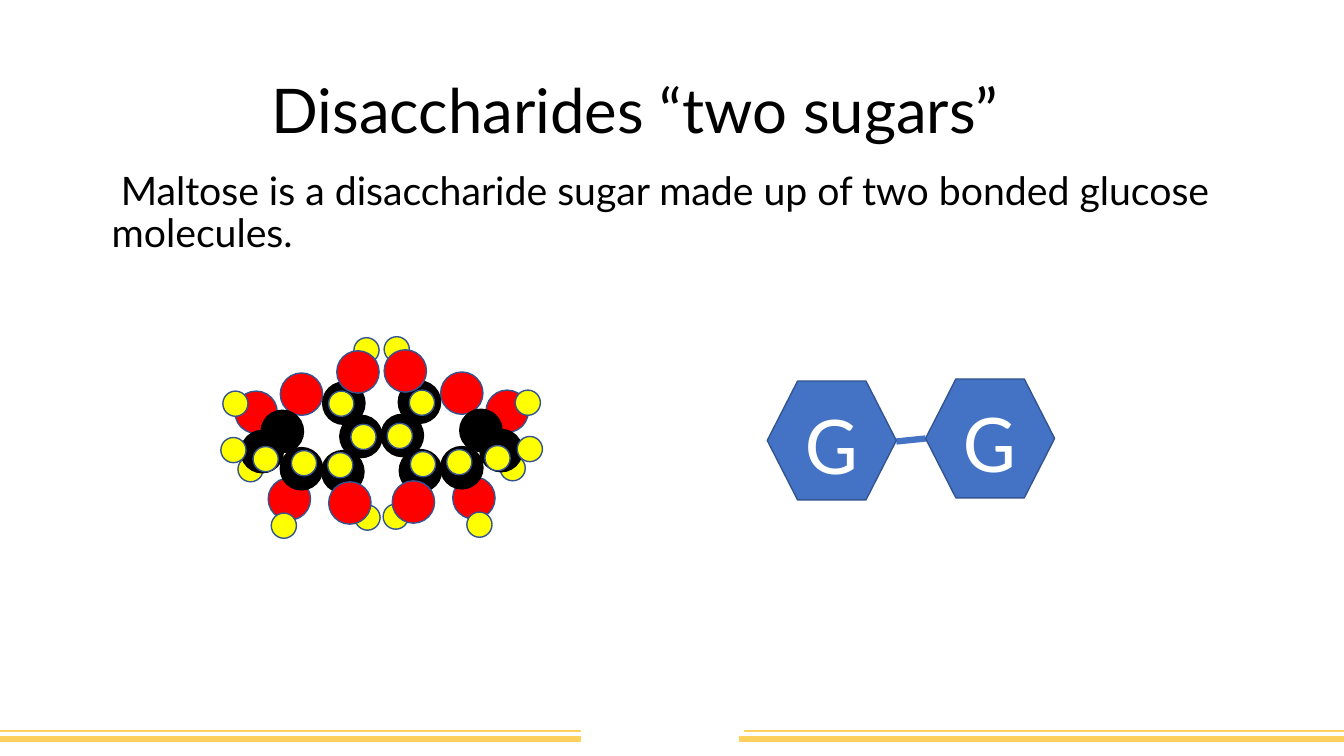
from dataclasses import dataclass

from lxml.etree import SubElement
from pptx import Presentation
from pptx.dml.color import RGBColor
from pptx.enum.shapes import MSO_CONNECTOR, MSO_SHAPE
from pptx.enum.text import MSO_ANCHOR, PP_ALIGN
from pptx.oxml.ns import qn
from pptx.util import Pt

EMU_PER_PX = 9144  # 100 px to the inch


def px(length):
    return length * EMU_PER_PX


@dataclass(frozen=True)
class Theme:
    text: str = "000000"
    letter: str = "FFFFFF"
    carbon: str = "000000"
    oxygen: str = "FF0000"
    hydrogen: str = "FFFF00"
    glucose: str = "4472C4"
    outline: str = "325491"
    footer: str = "FFD05B"
    font: str = "Lato"
    letter_font: str = "Calibri"
    title_size: int = 44
    body_size: int = 28
    letter_size: int = 60
    thin: float = 1
    rule: float = 1.5
    thick: float = 4.5


class SlideBuilder:
    def __init__(self, slide, theme):
        self.slide = slide
        self.theme = theme

    def group(self):
        return self.slide.shapes.add_group_shape().shapes

    def line(self, shapes, start, end, color, width):
        connector = shapes.add_connector(
            MSO_CONNECTOR.STRAIGHT, *map(px, start + end))
        connector.line.color.rgb = RGBColor.from_string(color)
        connector.line.width = Pt(width)
        SubElement(connector._element.spPr, qn("a:effectLst"))

    def shape(self, shapes, preset, box, fill, outline):
        shape = shapes.add_shape(preset, *map(px, box))
        shape.shadow.inherit = False
        shape.fill.solid()
        shape.fill.fore_color.rgb = RGBColor.from_string(fill)
        shape.line.color.rgb = RGBColor.from_string(outline)
        shape.line.width = Pt(self.theme.thin)
        return shape

    def run(self, paragraph, text, size, font, color):
        run = paragraph.add_run()
        run.text = text
        run.font.size = Pt(size)
        run.font.name = font
        run.font.color.rgb = RGBColor.from_string(color)

    def text(self, box, text, size, anchor, align, right_inset=10, indent=0):
        frame = self.slide.shapes.add_textbox(*map(px, box)).text_frame
        frame.word_wrap = True
        frame.vertical_anchor = anchor
        frame.margin_right = px(right_inset)
        paragraph = frame.paragraphs[0]
        paragraph.alignment = align
        paragraph.line_spacing = 0.9
        paragraph._p.get_or_add_pPr().set("indent", str(px(indent)))
        self.run(paragraph, text, size, self.theme.font, self.theme.text)

    def glucose_unit(self, shapes, left, top):
        hexagon = self.shape(shapes, MSO_SHAPE.HEXAGON, (left, top, 128, 118),
                             self.theme.glucose, self.theme.outline)
        hexagon.adjustments[0] = 0.255
        hexagon.text_frame.vertical_anchor = MSO_ANCHOR.MIDDLE
        paragraph = hexagon.text_frame.paragraphs[0]
        paragraph.alignment = PP_ALIGN.CENTER
        self.run(paragraph, "G", self.theme.letter_size,
                 self.theme.letter_font, self.theme.letter)

    def molecule(self, atoms, mirrored=False):
        """Draw the atoms back to front, optionally reflected to the right."""
        theme = self.theme
        kinds = {
            "C": (42, theme.carbon, theme.carbon),
            "O": (42, theme.oxygen, theme.outline),
            "H": (25, theme.hydrogen, theme.outline),
        }
        shapes = self.group()
        for element, left, top in atoms:
            size, fill, outline = kinds[element]
            if mirrored:
                left, top = MIRROR_SUM - left - size, top - 1
            self.shape(shapes, MSO_SHAPE.OVAL, (left, top, size, size),
                       fill, outline)


MIRROR_SUM = 757  # left edge of an atom plus right edge of its reflection
GLUCOSE_ATOMS = [
    ("O", 233, 388), ("O", 266, 474), ("C", 337, 412), ("O", 278, 370),
    ("C", 320, 379), ("H", 351, 335), ("H", 348, 421), ("H", 352, 501),
    ("H", 269, 509), ("H", 221, 388), ("C", 319, 447), ("C", 278, 444),
    ("C", 259, 407), ("O", 326, 478), ("H", 325, 449), ("H", 236, 453),
    ("H", 289, 447), ("H", 326, 388), ("O", 334, 348), ("C", 239, 427),
    ("H", 251, 443), ("H", 219, 434),
]


def main():
    theme = Theme()
    deck = Presentation()
    deck.slide_width, deck.slide_height = px(1333), px(750)
    builder = SlideBuilder(deck.slides.add_slide(deck.slide_layouts[6]), theme)

    for left, right, y, width in [
        (733, 1333, 733, theme.thick), (0, 576, 733, theme.thick),
        (0, 576, 725, theme.rule), (738, 1333, 725, theme.rule),
    ]:
        builder.line(builder.slide.shapes, (left, y), (right, y),
                     theme.footer, width)

    builder.text((47, 40, 1194, 145), "Disaccharides “two sugars”",
                 theme.title_size, MSO_ANCHOR.MIDDLE, PP_ALIGN.CENTER,
                 right_inset=38)
    builder.text((101, 165, 1150, 508),
                 "Maltose is a disaccharide sugar made up of two bonded "
                 "glucose molecules.",
                 theme.body_size, MSO_ANCHOR.TOP, PP_ALIGN.LEFT, indent=9)

    builder.molecule(GLUCOSE_ATOMS)

    maltose = builder.group()
    builder.line(maltose, (889, 438), (918, 435), theme.glucose, theme.thick)
    builder.glucose_unit(maltose, 761, 378)
    builder.glucose_unit(maltose, 918, 376)

    builder.molecule(GLUCOSE_ATOMS, mirrored=True)

    deck.save("out.pptx")


if __name__ == "__main__":
    main()
